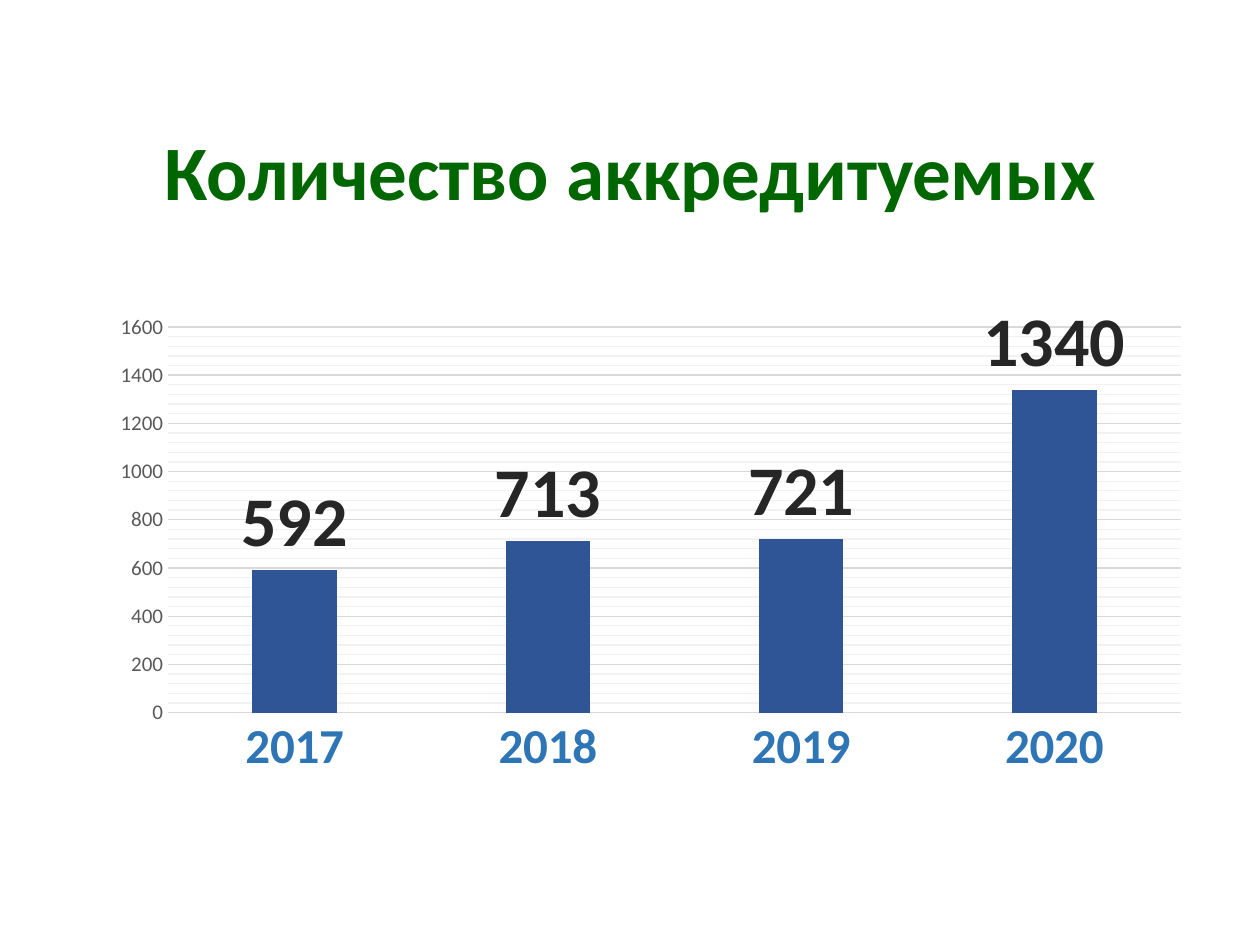
from copy import deepcopy

from lxml import etree
from pptx import Presentation
from pptx.chart.data import CategoryChartData
from pptx.dml.color import RGBColor
from pptx.enum.chart import XL_CHART_TYPE, XL_LABEL_POSITION, XL_TICK_MARK
from pptx.enum.text import MSO_ANCHOR, PP_ALIGN
from pptx.oxml.ns import qn
from pptx.util import Emu, Pt

COLUMNS = XL_CHART_TYPE.COLUMN_CLUSTERED
ABOVE_BAR = XL_LABEL_POSITION.OUTSIDE_END
NO_TICK = XL_TICK_MARK.NONE
MIDDLE = MSO_ANCHOR.MIDDLE
CENTER = PP_ALIGN.CENTER

EMU_PER_PX = 914400 / 126
FONT = "Calibri"
COLORS = {
    "title": "006600",
    "bar": "2F5597",
    "value": "262626",
    "year": "2E75B6",
    "scale": "595959",
    "major": "D9D9D9",
    "minor": "F2F2F2",
}
ACCREDITED = {"2017": 592, "2018": 713, "2019": 721, "2020": 1340}


def px(length):
    return Emu(round(length * EMU_PER_PX))


def color(name):
    return RGBColor.from_string(COLORS[name])


def style_font(font, size, color_name, bold=False):
    font.name = FONT
    font.size = Pt(size)
    font.bold = bold
    font.color.rgb = color(color_name)


def style_line(line, color_name):
    line.color.rgb = color(color_name)
    line.width = Pt(0.75)


def add_title(page, text, left, top, width, height):
    box = page.shapes.add_textbox(px(left), px(top), px(width), px(height))
    frame = box.text_frame
    frame.word_wrap = True
    frame.vertical_anchor = MIDDLE
    para = frame.paragraphs[0]
    para.alignment = CENTER
    para.line_spacing = 0.9
    span = para.add_run()
    span.text = text
    style_font(span.font, 44, "title", bold=True)


def place_plot(chart, **fractions):
    """Fix the inner plot area as fractions of the chart frame."""
    plot_area = chart.plots[0]._element.getparent()
    for old in plot_area.findall(qn("c:layout")):
        plot_area.remove(old)
    layout = etree.Element(qn("c:layout"))
    manual = etree.SubElement(layout, qn("c:manualLayout"))
    settings = {"layoutTarget": "inner", "xMode": "edge", "yMode": "edge", **fractions}
    for tag, value in settings.items():
        etree.SubElement(manual, qn(f"c:{tag}")).set("val", str(value))
    plot_area.insert(0, layout)


def style_gridlines(axis):
    """Style the major gridlines, then give the minor ones a paler version."""
    axis.has_major_gridlines = True
    axis.has_minor_gridlines = True
    style_line(axis.major_gridlines.format.line, "major")
    major = axis._element.find(qn("c:majorGridlines"))
    minor = axis._element.find(qn("c:minorGridlines"))
    minor.append(deepcopy(major.find(qn("c:spPr"))))
    for tint in minor.iter(qn("a:srgbClr")):
        tint.set("val", COLORS["minor"])


def style_axes(chart):
    years, scale = chart.category_axis, chart.value_axis
    for axis in (years, scale):
        axis.major_tick_mark = NO_TICK
        axis.minor_tick_mark = NO_TICK
    style_font(years.tick_labels.font, 28, "year", bold=True)
    style_line(years.format.line, "major")

    style_font(scale.tick_labels.font, 12, "scale")
    scale.format.line.fill.background()
    scale.minimum_scale, scale.maximum_scale = 0, 1600
    scale.major_unit, scale.minor_unit = 200, 40
    style_gridlines(scale)


def add_column_chart(page, counts, left, top, width, height):
    data = CategoryChartData()
    data.categories = list(counts)
    data.add_series("Количество", list(counts.values()))
    frame = page.shapes.add_chart(
        COLUMNS, px(left), px(top), px(width), px(height), data)
    chart = frame.chart
    chart.has_title = False
    chart.has_legend = False
    chart.font.name = FONT
    chart.font.size = Pt(10)
    style_axes(chart)

    # Bars and their values
    plot = chart.plots[0]
    plot.gap_width = 199
    plot.vary_by_categories = False
    fill = plot.series[0].format.fill
    fill.solid()
    fill.fore_color.rgb = color("bar")
    plot.has_data_labels = True
    labels = plot.data_labels
    labels.show_value = True
    labels.position = ABOVE_BAR
    style_font(labels.font, 40, "value", bold=True)
    return chart


def main():
    deck = Presentation()
    deck.slide_width, deck.slide_height = px(1260), px(945)
    page = deck.slides.add_slide(deck.slide_layouts[6])

    add_title(page, "Количество аккредитуемых", 88, 84, 1086, 183)
    chart = add_column_chart(page, ACCREDITED, 102, 301, 1101, 484)
    place_plot(chart, x=0.06, y=0.05, w=0.92, h=0.8)

    deck.save("out.pptx")


if __name__ == "__main__":
    main()
